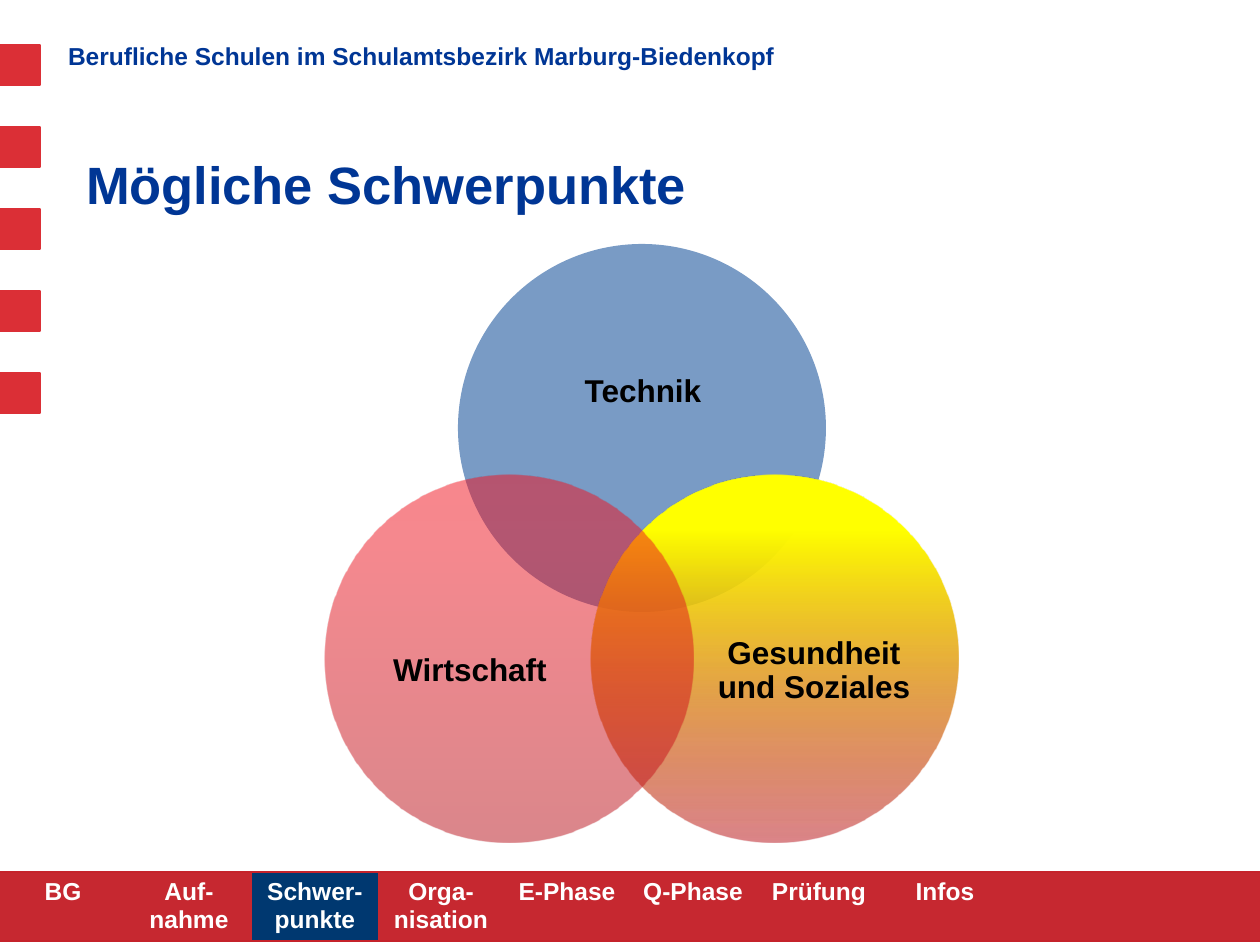
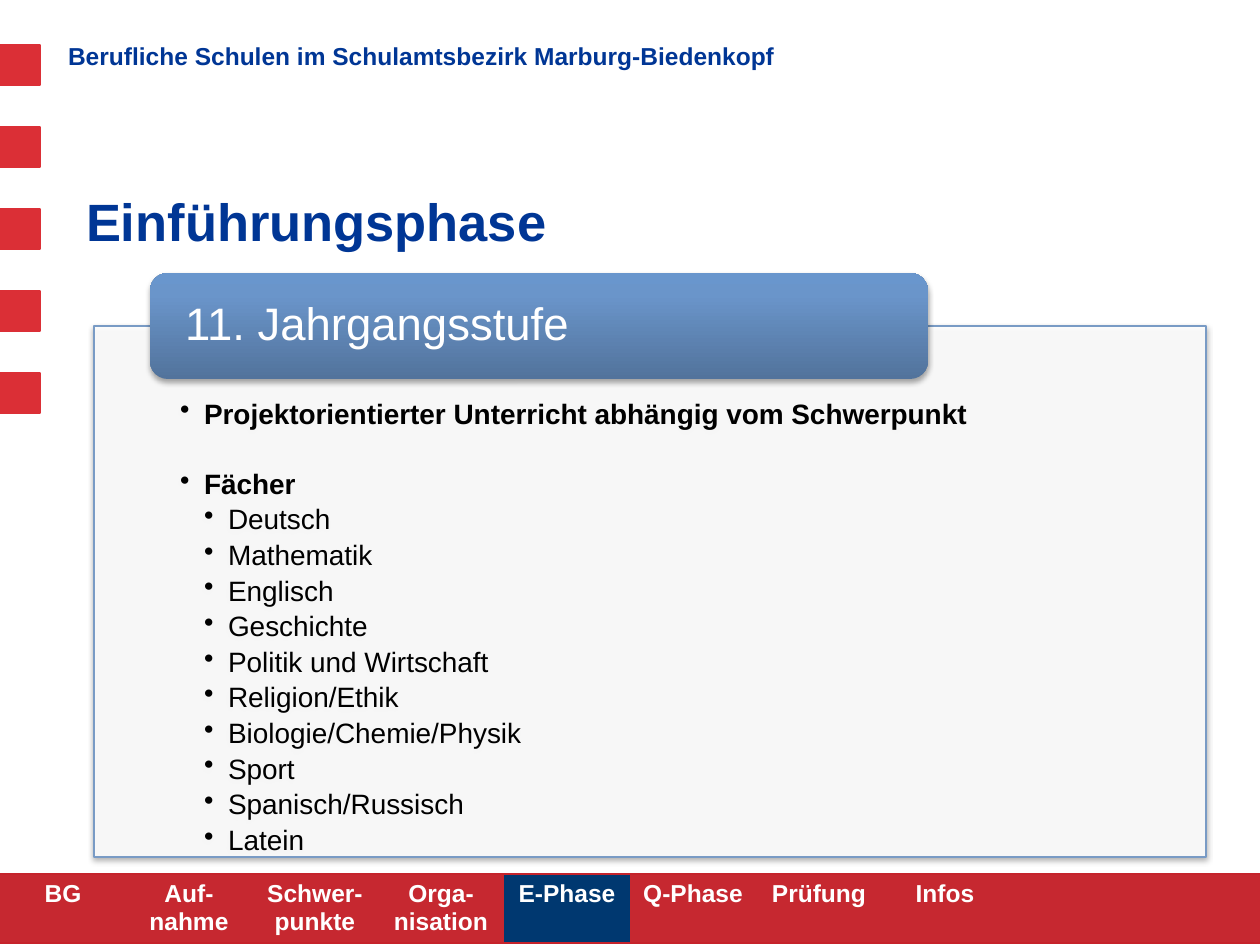
"""Build two slides on vocational school specialisations and the introductory phase."""
from lxml import etree
from pptx import Presentation
from pptx import util as u
from pptx.dml.color import RGBColor
from pptx.enum import shapes, text
from pptx.oxml.ns import qn

PX = 914400 / 126
FONT = "Arial"
WHITE = RGBColor(0xFF, 0xFF, 0xFF)
BLACK = RGBColor(0, 0, 0)
TITLE_BLUE = RGBColor(0x00, 0x36, 0x95)
ACTIVE_BLUE = RGBColor(0x00, 0x38, 0x70)
SOFT_BLUE = RGBColor(0x79, 0x9B, 0xC5)
SQUARE_RED = RGBColor(0xDB, 0x2F, 0x36)
NAV_RED = RGBColor(0xC6, 0x28, 0x30)
EDGE_RED = RGBColor(0xC5, 0x23, 0x2B)
DARK_RED = RGBColor(0xB7, 0x0E, 0x17)
MID_RED = RGBColor(0xED, 0x12, 0x1E)
LIGHT_RED = RGBColor(0xF3, 0x0E, 0x1A)
YELLOW = RGBColor(0xFF, 0xFF, 0x00)
BANNER_DARK = RGBColor(0x52, 0x73, 0x9C)
BANNER_MID = RGBColor(0x6A, 0x95, 0xCA)
BANNER_LIGHT = RGBColor(0x69, 0x96, 0xCD)

HEADER = "Berufliche Schulen im Schulamtsbezirk Marburg-Biedenkopf"
NAV = ["BG", "Auf-nahme", "Schwer-punkte", "Orga-nisation", "E-Phase",
       "Q-Phase", "Prüfung", "Infos", "", ""]
SLIDES = [("Mögliche Schwerpunkte", (73, 123, 1162, 92), 872, "Schwer-punkte"),
          ("Einführungsphase", (73, 116, 1162, 136), 874, "E-Phase")]
CIRCLES = [
    ("Technik", (458, 244), (508, 309, 270, 166), SOFT_BLUE),
    ("Gesundheit und Soziales", (591, 475), (704, 570, 220, 203),
     [(0, DARK_RED, 50), (85, YELLOW, 100), (100, YELLOW, 100)]),
    ("Wirtschaft", (325, 475), (360, 570, 220, 203),
     [(0, DARK_RED, 50), (80, MID_RED, 50), (100, LIGHT_RED, 50)]),
]
TOPICS = ["Projektorientierter Unterricht abhängig vom Schwerpunkt", "Fächer"]
SUBJECTS = ["Deutsch", "Mathematik", "Englisch", "Geschichte", "Politik und Wirtschaft",
            "Religion/Ethik", "Biologie/Chemie/Physik", "Sport", "Spanisch/Russisch", "Latein"]


def add_shape(s, kind, box, fill, line=None):
    sp = s.shapes.add_shape(kind, *[round(v * PX) for v in box])
    sp.shadow.inherit = False
    if isinstance(fill, list):
        sp.fill.gradient()
        sp.fill.gradient_angle = 90
        stops = sp._element.spPr.find(".//" + qn("a:gsLst"))
        stops.clear()
        for pos, color, alpha in fill:
            gs = etree.SubElement(stops, qn("a:gs"), pos=str(pos * 1000))
            clr = etree.SubElement(gs, qn("a:srgbClr"), val=str(color))
            etree.SubElement(clr, qn("a:alpha"), val=str(alpha * 1000))
    else:
        sp.fill.solid()
        sp.fill.fore_color.rgb = fill
    if line is None:
        sp.line.fill.background()
    else:
        sp.line.color.rgb = line
        sp.line.width = u.Pt(0.75)
    return sp


def write(tf, content, size, color, bold=True, align=text.PP_ALIGN.LEFT,
          anchor=text.MSO_ANCHOR.TOP, insets=(0, 0, 0, 0), spacing=0.9):
    tf.text = content
    tf.word_wrap = True
    tf.auto_size = text.MSO_AUTO_SIZE.NONE
    tf.vertical_anchor = anchor
    tf.margin_left, tf.margin_top, tf.margin_right, tf.margin_bottom = [
        round(v * PX) for v in insets]
    for p in tf.paragraphs:
        p.alignment = align
        p.line_spacing = spacing
        for r in p.runs:
            r.font.name = FONT
            r.font.size = u.Pt(size)
            r.font.bold = bold
            r.font.color.rgb = color


prs = Presentation()
prs.slide_width, prs.slide_height = u.Inches(10), u.Inches(7.5)

for title, title_box, nav_top, active in SLIDES:
    s = prs.slides.add_slide(prs.slide_layouts[5])
    for i in range(5):
        add_shape(s, shapes.MSO_SHAPE.RECTANGLE, (0, 45 + 82 * i, 40, 40),
                  SQUARE_RED, SQUARE_RED)
    tb = s.shapes.add_textbox(*[round(v * PX) for v in (68, 38, 1012, 39)])
    write(tb.text_frame, HEADER, 14, TITLE_BLUE, insets=(0, 6, 0, 6))

    ph = s.shapes.title
    ph.left, ph.top, ph.width, ph.height = [round(v * PX) for v in title_box]
    write(ph.text_frame, title, 30, TITLE_BLUE, anchor=text.MSO_ANCHOR.BOTTOM,
          insets=(13, 0, 13, 0), spacing=1.0)

    tbl = s.shapes.add_table(1, len(NAV), 0, round(nav_top * PX),
                             prs.slide_width, round(69 * PX)).table
    tbl.first_row = tbl.horz_banding = False
    for cell, label in zip(tbl.rows[0].cells, NAV):
        cell.text = label
        p = cell.text_frame.paragraphs[0]
        p.alignment = text.PP_ALIGN.CENTER
        for r in p.runs:
            r.font.name = FONT
            r.font.size = u.Pt(14)
            r.font.bold = True
            r.font.color.rgb = WHITE
        tc_pr = cell._tc.get_or_add_tcPr()
        for side in "LR":
            ln = etree.SubElement(tc_pr, qn("a:ln" + side))
            etree.SubElement(ln, qn("a:noFill"))
        for side in "TB":
            ln = etree.SubElement(tc_pr, qn("a:ln" + side), w=str(u.Pt(0.75)))
            edge = etree.SubElement(ln, qn("a:solidFill"))
            etree.SubElement(edge, qn("a:srgbClr"), val=str(EDGE_RED))
        cell.fill.solid()
        cell.fill.fore_color.rgb = ACTIVE_BLUE if label == active else NAV_RED

focus, phase = prs.slides

for label, (x, y), label_box, fill in CIRCLES:
    add_shape(focus, shapes.MSO_SHAPE.OVAL, (x, y, 368, 368), fill)
    tb = focus.shapes.add_textbox(*[round(v * PX) for v in label_box])
    write(tb.text_frame, label, 18, BLACK, align=text.PP_ALIGN.CENTER,
          anchor=text.MSO_ANCHOR.MIDDLE)

panel = add_shape(phase, shapes.MSO_SHAPE.RECTANGLE, (94, 326, 1112, 531), WHITE, SOFT_BLUE)
clr = panel._element.spPr.find(qn("a:solidFill")).find(qn("a:srgbClr"))
etree.SubElement(clr, qn("a:alpha"), val="90000")
write(panel.text_frame, "\n".join(TOPICS + SUBJECTS), 16, BLACK, insets=(86, 74, 86, 15))
for p in panel.text_frame.paragraphs:
    is_topic = p.text in TOPICS
    pPr = p._p.get_or_add_pPr()
    pPr.set("marL", str(round((24 if is_topic else 48) * PX)))
    pPr.set("indent", str(round(-24 * PX)))
    etree.SubElement(pPr, qn("a:buChar"), char="•")
    p.space_after = u.Pt(3.1)
    p.runs[0].font.bold = is_topic
panel.text_frame.paragraphs[1].space_before = u.Pt(19.7)

banner = add_shape(phase, shapes.MSO_SHAPE.ROUNDED_RECTANGLE, (150, 273, 778, 106),
                   [(0, BANNER_DARK, 100), (80, BANNER_MID, 100), (100, BANNER_LIGHT, 100)])
write(banner.text_frame, "11. Jahrgangsstufe", 26, WHITE, bold=False,
      anchor=text.MSO_ANCHOR.MIDDLE, insets=(30, 0, 30, 0))

for sp in (panel, banner):
    effects = sp._element.spPr.find(qn("a:effectLst"))
    shadow = etree.SubElement(effects, qn("a:outerShdw"), blurRad="40000", dist="23000",
                              dir="5400000", rotWithShape="0")
    clr = etree.SubElement(shadow, qn("a:srgbClr"), val=str(BLACK))
    etree.SubElement(clr, qn("a:alpha"), val="35000")

prs.save("out.pptx")
